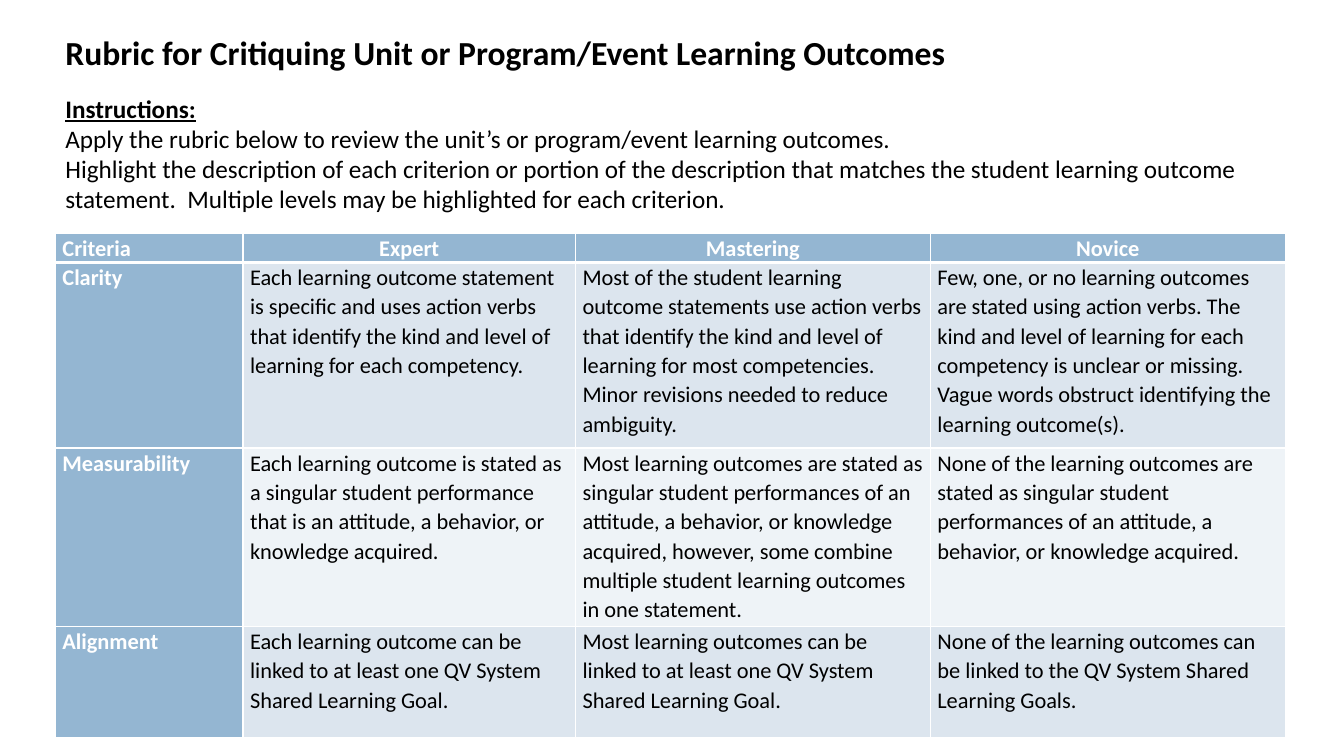
from dataclasses import dataclass

from lxml import etree
from pptx import Presentation
from pptx.dml.color import RGBColor
from pptx.enum.text import MSO_ANCHOR, PP_ALIGN
from pptx.oxml.ns import qn
from pptx.util import Pt

LEFT, CENTER = PP_ALIGN.LEFT, PP_ALIGN.CENTER
TOP = MSO_ANCHOR.TOP


@dataclass(frozen=True)
class Theme:
    font: str = "Calibri"
    text: str = "000000"
    white: str = "FFFFFF"
    accent: str = "94B6D2"
    bands: tuple = ("DCE5EE", "EEF3F7")
    title_size: int = 24
    body_size: int = 18
    table_size: int = 16
    table_spacing: float = 1.07
    cell_margin: float = 5.04
    rule: int = 1
    header_rule: int = 3


class RubricSlide:
    def __init__(self, slide, theme):
        self.slide = slide
        self.theme = theme

    def style(self, paragraph, size, color, bold=False, underline=False):
        for run in paragraph.runs:
            font = run.font
            font.name = self.theme.font
            font.size = Pt(size)
            font.bold = bold
            font.underline = underline
            font.color.rgb = RGBColor.from_string(color)

    def text_box(self, left, top, width, height, lines):
        """Each line is (text, size, bold, underline, space after)."""
        box = self.slide.shapes.add_textbox(Pt(left), Pt(top), Pt(width), Pt(height))
        frame = box.text_frame
        frame.word_wrap = True
        frame.text = "\n".join(line[0] for line in lines)
        for paragraph, (_, size, bold, underline, gap) in zip(frame.paragraphs, lines):
            paragraph.space_after = Pt(gap)
            self.style(paragraph, size, self.theme.text, bold, underline)

    def border(self, cell, side, width):
        properties = cell._tc.get_or_add_tcPr()
        line = etree.SubElement(properties, qn(f"a:ln{side}"), w=str(Pt(width)))
        fill = etree.SubElement(line, qn("a:solidFill"))
        etree.SubElement(fill, qn("a:srgbClr"), val=self.theme.white)

    def cell(self, cell, text, row, column):
        theme = self.theme
        heading = row == 0 or column == 0
        cell.margin_left = cell.margin_right = Pt(theme.cell_margin)
        cell.margin_top = cell.margin_bottom = 0
        cell.vertical_anchor = TOP

        # Borders, heavier between the header and the first criterion
        widths = {"L": theme.rule, "R": theme.rule,
                  "T": theme.header_rule if row == 1 else theme.rule,
                  "B": theme.header_rule if row == 0 else theme.rule}
        for side, width in widths.items():
            self.border(cell, side, width)

        # Fill
        color = theme.accent if heading else theme.bands[(row - 1) % 2]
        cell.fill.solid()
        cell.fill.fore_color.rgb = RGBColor.from_string(color)

        # Text
        cell.text_frame.text = text
        paragraph = cell.text_frame.paragraphs[0]
        paragraph.alignment = CENTER if row == 0 and column > 0 else LEFT
        paragraph.line_spacing = theme.table_spacing
        self.style(paragraph, theme.table_size,
                   theme.white if heading else theme.text, heading)

    def table(self, left, top, widths, heights, rows):
        rubric = self.slide.shapes.add_table(
            len(heights), len(widths), Pt(left), Pt(top),
            Pt(sum(widths)), Pt(sum(heights))).table
        for column, width in zip(rubric.columns, widths):
            column.width = Pt(width)
        for row, height in zip(rubric.rows, heights):
            row.height = Pt(height)
        for r, texts in enumerate(rows):
            for c, text in enumerate(texts):
                self.cell(rubric.cell(r, c), text, r, c)


RUBRIC = [
    ("Criteria", "Expert", "Mastering", "Novice"),
    ("Clarity",
     "Each learning outcome statement is specific and uses action verbs that "
     "identify the kind and level of learning for each competency.",
     "Most of the student learning outcome statements use action verbs that "
     "identify the kind and level of learning for most competencies. Minor "
     "revisions needed to reduce ambiguity.",
     "Few, one, or no learning outcomes are stated using action verbs. The kind "
     "and level of learning for each competency is unclear or missing.  Vague "
     "words obstruct identifying the learning outcome(s)."),
    ("Measurability",
     "Each learning outcome is stated as a singular student performance that is "
     "an attitude, a behavior, or knowledge acquired.",
     "Most learning outcomes are stated as singular student performances of an "
     "attitude, a behavior, or knowledge acquired, however, some combine multiple "
     "student learning outcomes in one statement.",
     "None of the learning outcomes are stated as singular student performances "
     "of an attitude, a behavior, or knowledge acquired."),
    ("Alignment",
     "Each learning outcome can be linked to at least one QV System Shared "
     "Learning Goal.",
     "Most learning outcomes can be linked to at least one QV System Shared "
     "Learning Goal.",
     "None of the learning outcomes can be linked to the QV System Shared "
     "Learning Goals."),
]


def main():
    presentation = Presentation()
    presentation.slide_width, presentation.slide_height = Pt(960), Pt(540)
    theme = Theme()
    page = RubricSlide(
        presentation.slides.add_slide(presentation.slide_layouts[6]), theme)
    left, width = 39.6, 879

    # Rubric table
    page.table(left, 166.5, [134, 237.5, 253.5, 253.5],
               [20.9, 132.5, 127.4, 79.2], RUBRIC)

    # Title and instructions
    body = theme.body_size
    page.text_box(left, 19.5, width, 211, [
        ("Rubric for Critiquing Unit or Program/Event Learning Outcomes",
         theme.title_size, True, False, 14.6),
        ("Instructions:", body, True, True, 0),
        ("Apply the rubric below to review the unit’s or program/event learning "
         "outcomes.", body, False, False, 0),
        ("Highlight the description of each criterion or portion of the description "
         "that matches the student learning outcome statement.  Multiple levels may "
         "be highlighted for each criterion.", body, False, False, 0),
    ])

    presentation.save("out.pptx")


if __name__ == "__main__":
    main()
